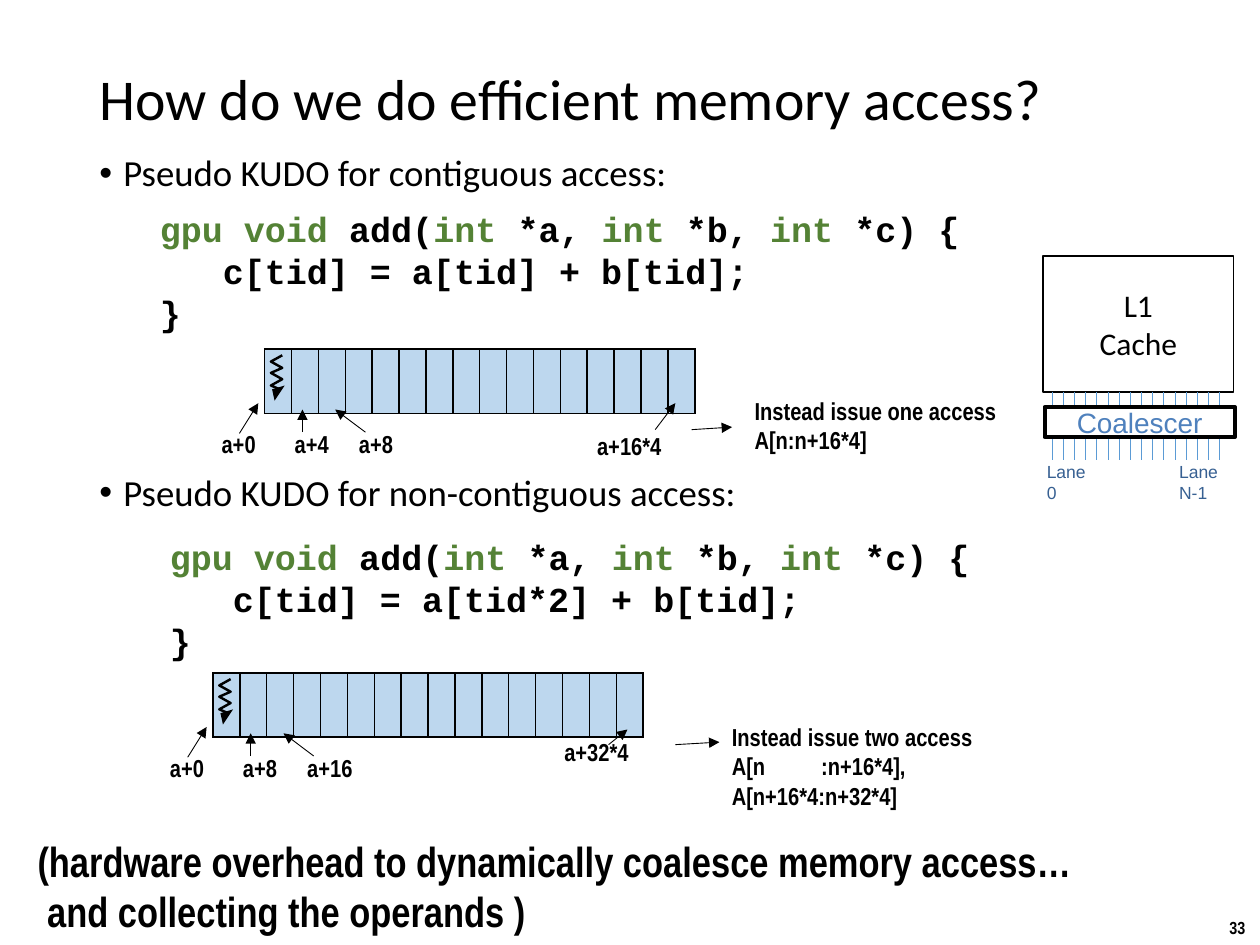
from dataclasses import dataclass

from lxml import etree
from pptx import Presentation
from pptx.dml.color import RGBColor
from pptx.enum.shapes import MSO_CONNECTOR, MSO_SHAPE
from pptx.enum.text import MSO_ANCHOR, PP_ALIGN
from pptx.oxml.ns import qn
from pptx.util import Emu, Inches, Pt

RECT, STRAIGHT = MSO_SHAPE.RECTANGLE, MSO_CONNECTOR.STRAIGHT
TOP, MIDDLE = MSO_ANCHOR.TOP, MSO_ANCHOR.MIDDLE
LEFT, CENTER = PP_ALIGN.LEFT, PP_ALIGN.CENTER

BLACK = RGBColor(0x00, 0x00, 0x00)
WHITE = RGBColor(0xFF, 0xFF, 0xFF)
GREEN = RGBColor(0x54, 0x82, 0x35)
CELL_BLUE = RGBColor(0xBD, 0xD7, 0xEE)
LANE_BLUE = RGBColor(0x5B, 0x9B, 0xD5)
LABEL_BLUE = RGBColor(0x37, 0x60, 0x92)
UNIT_BLUE = RGBColor(0x4F, 0x81, 0xBD)

# The slide is a grid of 100 columns by 75 rows
WIDTH, HEIGHT = Inches(10), Inches(7.5)
COL, ROW = WIDTH / 100, HEIGHT / 75
CELLS = LANES = 16


@dataclass
class Style:
    font: str
    size: float
    color: RGBColor = BLACK
    bold: bool = False


TITLE = Style("Calibri", 33)
BULLET = Style("Calibri", 21)
CACHE = Style("Calibri", 18)
CODE = Style("Courier New", 20, bold=True)
KEYWORD = Style("Courier New", 20, GREEN, True)
NOTE = Style("Arial Narrow", 14, bold=True)
CLOSING = Style("Arial Narrow", 24, bold=True)
NUMBER = Style("Arial Narrow", 10, bold=True)
LANE = Style("Arial", 10, LABEL_BLUE)
UNIT = Style("Arial", 16, UNIT_BLUE)


@dataclass
class Access:
    """One access pattern: its code, memory strip, labels and remark."""
    col: float
    row: float
    code_at: tuple
    body: str
    labels: tuple
    last: str
    last_at: tuple
    last_arrow: tuple
    remark: tuple
    remark_at: tuple
    remark_arrow: tuple


ACCESSES = (
    Access(21, 27.7, (11.7, 16), "\tc[tid] = a[tid] + b[tid];",
           ("a+0", "a+4", "a+8"), "a+16*4", (46.4, 33.7), (52, 34.1, 53.6, 32),
           ("Instead issue one access", "A[n:n+16*4]"),
           (58.9, 30.9, 21.4, 5.7), (54.9, 34.1, 58.1, 33.9)),
    Access(16.9, 53.4, (12.5, 42), "\tc[tid] = a[tid*2] + b[tid];",
           ("a+0", "a+8", "a+16"), "a+32*4", (43.8, 58), (48.3, 59.1, 49.8, 57.9),
           ("Instead issue two access", "A[n\t:n+16*4],", "A[n+16*4:n+32*4]"),
           (57.1, 56.8, 21.3, 10.4), (53.6, 59.1, 57.1, 58.9)),
)
SIGNATURE = [("gpu void ", KEYWORD), ("add(", CODE), ("int ", KEYWORD), ("*a, ", CODE),
             ("int ", KEYWORD), ("*b, ", CODE), ("int ", KEYWORD), ("*c) {", CODE)]

# Offsets from the corner of a strip
LABEL_COLS = (-4.4, 1.4, 6.5)
ARROWS = ((-2, 6.7, -0.5, 4.3), (3, 6.6, 3, 4.8), (8, 6.6, 5.6, 4.8))
ZIGZAG = ((1.4, 0.5), (0.5, 1), (1.4, 1.5), (0.5, 1.9), (1.4, 2.4), (0.5, 2.9), (1.2, 3.2))
ZIGZAG_HEAD = ((0.6, 3.2), (0.8, 4.1), (1.6, 2.9))


def x(cols: float) -> Emu:
    return Emu(round(cols * COL))


def y(rows: float) -> Emu:
    return Emu(round(rows * ROW))


def fill_frame(tf, lines, wrap=True, anchor=TOP, align=LEFT):
    """Write lines, each a list of (text, style) runs."""
    tf.word_wrap, tf.vertical_anchor = wrap, anchor
    for i, runs in enumerate(lines):
        p = tf.add_paragraph() if i else tf.paragraphs[0]
        p.alignment = align
        for text, style in runs:
            r = p.add_run()
            r.text = text
            r.font.name, r.font.size = style.font, Pt(style.size)
            r.font.bold, r.font.color.rgb = style.bold, style.color


def add_text(s, at: tuple, lines, **options):
    c, r, w, h = at
    tf = s.shapes.add_textbox(x(c), y(r), x(w), y(h)).text_frame
    fill_frame(tf, lines, **options)
    return tf


def add_box(s, at: tuple, line_width: float, lines, wrap=True):
    c, r, w, h = at
    sp = s.shapes.add_shape(RECT, x(c), y(r), x(w), y(h))
    sp.shadow.inherit = False
    sp.fill.solid()
    sp.fill.fore_color.rgb = WHITE
    sp.line.color.rgb, sp.line.width = BLACK, Pt(line_width)
    fill_frame(sp.text_frame, lines, wrap, MIDDLE, CENTER)


def add_line(s, ends: tuple, color=BLACK, arrow=True):
    c1, r1, c2, r2 = ends
    line = s.shapes.add_connector(STRAIGHT, x(c1), y(r1), x(c2), y(r2))
    line.line.color.rgb, line.line.width = color, Pt(0.5)
    if arrow:
        etree.SubElement(line.line._get_or_add_ln(), qn("a:tailEnd"), type="triangle")
    etree.SubElement(line._element.spPr, qn("a:effectLst"))


def add_outline(s, col: float, row: float, offsets: tuple, closed: bool):
    points = [(x(col + dc), y(row + dr)) for dc, dr in offsets]
    builder = s.shapes.build_freeform(*points[0], scale=1.0)
    builder.add_line_segments(points[1:], close=closed)
    sp = builder.convert_to_shape()
    sp.shadow.inherit = False
    if closed:
        sp.fill.solid()
        sp.fill.fore_color.rgb = BLACK
        sp.line.fill.background()
    else:
        sp.fill.background()
        sp.line.color.rgb, sp.line.width = BLACK, Pt(1.4)


def add_strip(s, col: float, row: float):
    table = s.shapes.add_table(1, CELLS, x(col), y(row), x(34.2), y(5.1)).table
    table.first_row = table.horz_banding = False
    for i, cell in enumerate(table.iter_cells()):
        table.columns[i].width = x(34.2 / CELLS)
        cell.margin_left = cell.margin_right = 0
        tc_pr = cell._tc.get_or_add_tcPr()
        for side in ("a:lnL", "a:lnR", "a:lnT", "a:lnB"):
            ln = etree.SubElement(tc_pr, qn(side), w=str(Pt(1)))
            solid = etree.SubElement(ln, qn("a:solidFill"))
            etree.SubElement(solid, qn("a:srgbClr"), val=str(BLACK))
        cell.fill.solid()
        cell.fill.fore_color.rgb = CELL_BLUE


def add_access(s, a: Access):
    add_text(s, (*a.code_at, 83.3, 11.1), [SIGNATURE, [(a.body, CODE)], [("}", CODE)]])
    add_strip(s, a.col, a.row)
    add_outline(s, a.col, a.row, ZIGZAG, closed=False)
    add_outline(s, a.col, a.row, ZIGZAG_HEAD, closed=True)
    for label, dc, (c1, r1, c2, r2) in zip(a.labels, LABEL_COLS, ARROWS):
        width = 4.8 if len(label) == 3 else 5.6
        add_text(s, (a.col + dc, a.row + 5.9, width, 3.4), [[(label, NOTE)]], wrap=False)
        add_line(s, (a.col + c1, a.row + r1, a.col + c2, a.row + r2))
    add_text(s, (*a.last_at, 7.2, 3.4), [[(a.last, NOTE)]], wrap=False)
    add_line(s, a.last_arrow)
    tf = add_text(s, a.remark_at, [[(line, NOTE)] for line in a.remark], wrap=False)
    for p in tf.paragraphs:  # the tab stop lines up the range's colon
        tabs = etree.SubElement(p._p.get_or_add_pPr(), qn("a:tabLst"))
        etree.SubElement(tabs, qn("a:tab"), pos=str(x(7.1)), algn="l")
    add_line(s, a.remark_arrow)


def add_bullets(s):
    tf = add_text(s, (6.9, 11.8, 86.2, 49.2),
                  [[("Pseudo KUDO for contiguous access:", BULLET)],
                   [("Pseudo KUDO for non-contiguous access:", BULLET)]])
    for p, gap in zip(tf.paragraphs, (7.5, 160)):
        p.line_spacing, p.space_before = 0.9, Pt(gap)
        p_pr = p._p.get_or_add_pPr()
        p_pr.set("marL", str(x(1.9)))
        p_pr.set("indent", str(-x(1.9)))
        etree.SubElement(p_pr, qn("a:buFont"), typeface="Arial")
        etree.SubElement(p_pr, qn("a:buChar"), char="•")


def add_cache(s):
    add_box(s, (82.8, 20.3, 15.1, 10.8), 1, [[("L1", CACHE)], [("Cache", CACHE)]])
    for i in range(LANES):
        c = 83.5 + i * 13.3 / (LANES - 1)
        add_line(s, (c, 31.1, c, 36.5), LANE_BLUE, arrow=False)
    add_text(s, (82.1, 36.1, 5.6, 2.7), [[("Lane 0", LANE)]])
    add_text(s, (92.6, 36.1, 6.8, 2.7), [[("Lane N-1", LANE)]])
    add_box(s, (82.9, 32.3, 15.1, 2.4), 2.25, [[("Coalescer", UNIT)]], wrap=False)


def main():
    prs = Presentation()
    prs.slide_width, prs.slide_height = WIDTH, HEIGHT
    s = prs.slides.add_slide(prs.slide_layouts[6])
    # Title, bullets and page number
    add_text(s, (96.6, 72.3, 3.4, 2.7), [[("33", NUMBER)]], wrap=False)
    title = add_text(s, (6.9, 0.8, 86.2, 14.5),
                     [[("How do we do efficient memory access?", TITLE)]], anchor=MIDDLE)
    title.paragraphs[0].line_spacing = 0.9
    add_bullets(s)
    # Access patterns, closing remark and hardware sketch
    for access in ACCESSES:
        add_access(s, access)
    add_text(s, (2, 65.8, 88.7, 9.1),
             [[("(hardware overhead to dynamically coalesce memory access…", CLOSING)],
              [(" and collecting the operands )", CLOSING)]])
    add_cache(s)
    prs.save("out.pptx")


if __name__ == "__main__":
    main()
